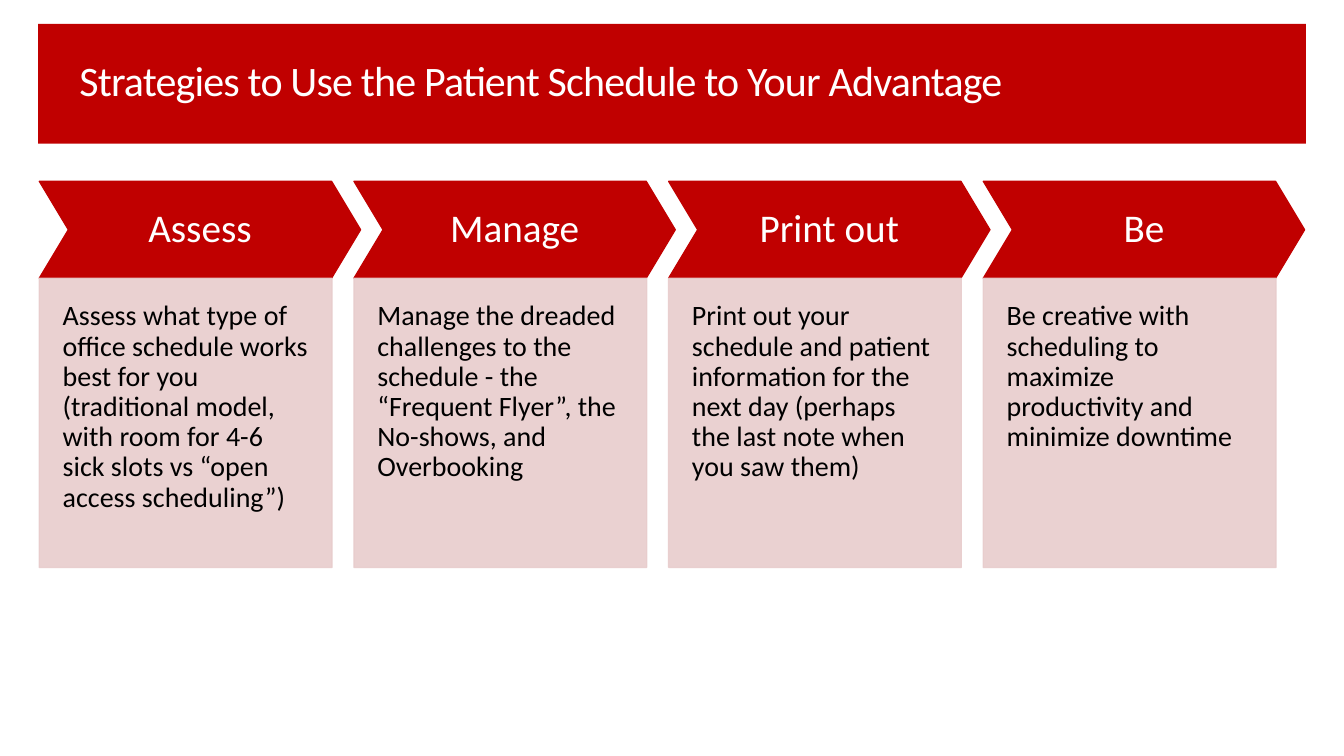
from lxml import etree
from pptx import Presentation
from pptx.dml.color import RGBColor
from pptx.enum.shapes import MSO_SHAPE
from pptx.enum.text import MSO_ANCHOR, MSO_AUTO_SIZE, PP_ALIGN
from pptx.oxml.ns import qn
from pptx.util import Cm, Pt

RECT, CHEVRON = MSO_SHAPE.RECTANGLE, MSO_SHAPE.CHEVRON
TOP, MIDDLE = MSO_ANCHOR.TOP, MSO_ANCHOR.MIDDLE
LEFT, CENTER = PP_ALIGN.LEFT, PP_ALIGN.CENTER
NO_FIT = MSO_AUTO_SIZE.NONE

RED = RGBColor(0xC0, 0x00, 0x00)
PINK = RGBColor(0xE8, 0xCC, 0xCC)
WHITE = RGBColor(0xFF, 0xFF, 0xFF)
BLACK = RGBColor(0x00, 0x00, 0x00)

FONT = "Calibri"
TITLE = "Strategies to Use the Patient Schedule to Your Advantage"
STEPS = [
    ("Assess", "Assess what type of office schedule works best for you "
     "(traditional model, with room for 4-6 sick slots vs “open access scheduling”)"),
    ("Manage", "Manage the dreaded challenges to the schedule - the "
     "“Frequent Flyer”, the No-shows, and Overbooking"),
    ("Print out", "Print out your schedule and patient information for the "
     "next day (perhaps the last note when you saw them)"),
    ("Be", "Be creative with scheduling to maximize productivity and "
     "minimize downtime"),
]
EDGE, PITCH = 0.99, 7.93
HEAD_TOP, HEAD_HIGH, HEAD_WIDE = 4.57, 2.44, 8.1
BODY_HIGH, BODY_WIDE = 7.29, 7.38


def write(shape, text, size, color, align, anchor, pad, base):
    """Put one formatted paragraph in a shape."""
    frame = shape.text_frame
    frame.word_wrap = True
    frame.auto_size = NO_FIT
    frame.vertical_anchor = anchor
    frame.margin_left = frame.margin_right = frame.margin_top = Cm(pad)
    frame.margin_bottom = Cm(base)
    para = frame.paragraphs[0]
    para.text = text
    para.alignment = align
    para.line_spacing = 0.9
    para.space_before = Pt(0)
    font = para.font
    font.name, font.size, font.bold = FONT, Pt(size), False
    font.color.rgb = color


def block(slide, kind, left, top, wide, high, color):
    """Draw a flat filled shape."""
    shape = slide.shapes.add_shape(kind, Cm(left), Cm(top), Cm(wide), Cm(high))
    shape.shadow.inherit = False
    shape.fill.solid()
    shape.fill.fore_color.rgb = color
    shape.line.color.rgb = color
    shape.line.width = Pt(0.85)
    return shape


def fade(shape, share):
    """Make the fill and line of a shape partly see-through."""
    for color in shape.element.spPr.iter(qn("a:srgbClr")):
        etree.SubElement(color, qn("a:alpha"), val=str(share * 1000))


def banner(slide):
    """Place the title on its red band."""
    title = slide.shapes.title
    title.left, title.top = Cm(1.75), Cm(0.84)
    title.width, title.height = Cm(29.31), Cm(2.51)
    write(title, TITLE, 30, WHITE, LEFT, MIDDLE, 0.25, 0.25)
    for font in title.element.iter(qn("a:defRPr")):
        font.set("spc", "-60")
    band = block(slide, RECT, 0.96, 0.6, 31.95, 3.02, RED)
    band.line.fill.background()
    title.element.addprevious(band.element)


def step(slide, left, name, note):
    """Draw a chevron heading with its note below."""
    head = block(slide, CHEVRON, left, HEAD_TOP, HEAD_WIDE, HEAD_HIGH, RED)
    head.adjustments[0] = 0.3
    write(head, name, 28, WHITE, CENTER, MIDDLE, 0.3, 0.3)
    body = block(slide, RECT, left, HEAD_TOP + HEAD_HIGH, BODY_WIDE, BODY_HIGH, PINK)
    fade(body, 90)
    write(body, note, 20, BLACK, LEFT, TOP, 0.59, 1.17)


def main():
    """Build and save the slide."""
    deck = Presentation()
    deck.slide_width, deck.slide_height = Cm(33.87), Cm(19.05)
    slide = deck.slides.add_slide(deck.slide_layouts[5])
    banner(slide)
    for place, (name, note) in enumerate(STEPS):
        step(slide, EDGE + place * PITCH, name, note)
    deck.save("out.pptx")


if __name__ == "__main__":
    main()
